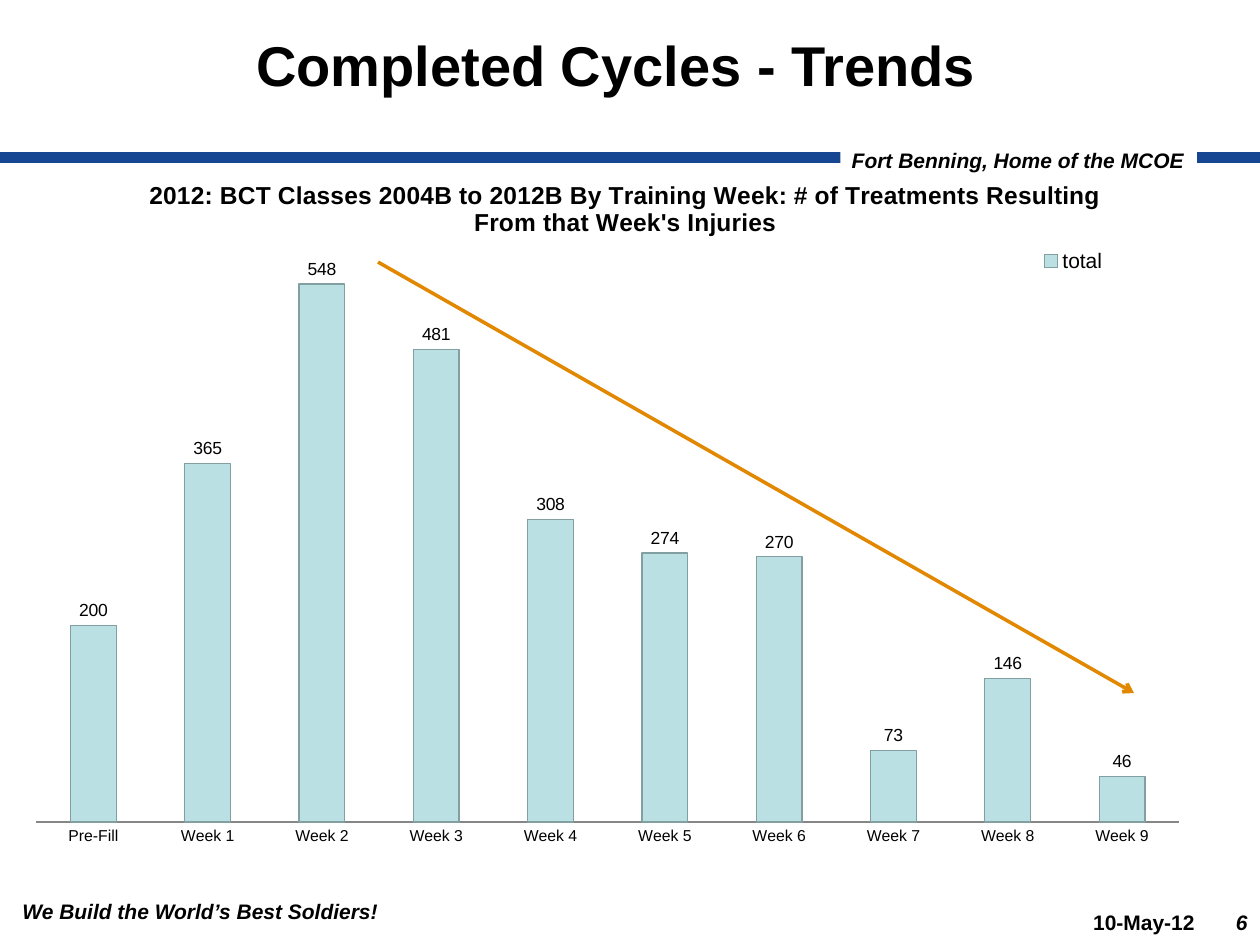
"""Build the slide on completed cycle trends: a column chart with a trend arrow."""
from dataclasses import dataclass

from lxml.etree import SubElement
from pptx import Presentation
from pptx.chart.data import CategoryChartData
from pptx.dml.color import RGBColor as Color
from pptx.enum.chart import (XL_CHART_TYPE as ChartType, XL_LABEL_POSITION as LabelSpot,
                             XL_LEGEND_POSITION as LegendSpot, XL_TICK_MARK as TickMark)
from pptx.enum.shapes import MSO_CONNECTOR as Connector, MSO_SHAPE as Shape
from pptx.enum.text import MSO_ANCHOR as Anchor, PP_ALIGN as Align
from pptx.oxml import parse_xml
from pptx.oxml.ns import nsdecls, qn
from pptx.util import Inches, Pt

TITLE = "Completed Cycles - Trends"
CHART_TITLE = ("2012: BCT Classes 2004B to 2012B By Training Week: "
               "# of Treatments Resulting From that Week's Injuries")
SERIES = "total"
CATEGORIES = ["Pre-Fill"] + [f"Week {week}" for week in range(1, 10)]
TREATMENTS = [200, 365, 548, 481, 308, 274, 270, 73, 146, 46]
SMALL_TEXTS = [
    ("We Build the World’s Best Soldiers!", (0.08, 7.08, 3.06, 0.3), Align.LEFT, True),
    ("10-May-12", (8.25, 7.17, 1.33, 0.3), Align.RIGHT, False),
    ("6", (9.58, 7.17, 0.42, 0.27), Align.RIGHT, True),
]
BANNER = "Fort Benning, Home of the MCOE"
TITLE_AT = (1.9, 0.19, 5.98, 0.64)
BANNER_AT = (6.67, 1.17, 2.83, 0.2)
CHART_AT = (0, 1.33, 9.58, 5.58)
RULE = (0, 1.25, 10, 1.25)
TREND = (3, 2.08, 9, 5.5)


@dataclass(frozen=True)
class Theme:
    """Colours, font and type sizes."""
    font: str = "Arial"
    ink: str = "000000"
    paper: str = "FFFFFF"
    rule: str = "164592"
    trend: str = "E28700"
    bar: str = "BBE0E3"
    bar_edge: str = "82A0A2"
    axis: str = "868686"
    title: int = 32
    heading: int = 14
    small: int = 12
    label: int = 10
    tick: int = 9


THEME = Theme()


def inches(values):
    return [Inches(value) for value in values]


def style(font, size, bold=False, italic=False):
    font.name, font.size, font.bold, font.italic = THEME.font, Pt(size), bold, italic
    font.color.rgb = Color.from_string(THEME.ink)


def write(shape, text, size, align, italic=False, wrap=False):
    frame = shape.text_frame
    frame.text, frame.word_wrap = text, wrap
    para = frame.paragraphs[0]
    para.alignment = align
    style(para.runs[0].font, size, True, italic)
    return frame


def add_line(page, ends, color, width, arrow=False):
    line = page.shapes.add_connector(Connector.STRAIGHT, *inches(ends))
    line.line.color.rgb = Color.from_string(color)
    line.line.width = Pt(width)
    if arrow:
        SubElement(line.line._get_or_add_ln(), qn("a:tailEnd"), type="arrow")
    SubElement(line._element.spPr, qn("a:effectLst"))


def place(element, index, target="", **shares):
    """Set a manual layout, in shares of the chart, on one chart part."""
    for old in element.findall(qn("c:layout")):
        element.remove(old)
    inner = f'<c:layoutTarget val="{target}"/>' if target else ""
    modes = "".join(f'<c:{key}Mode val="edge"/>' for key in "xy")
    sizes = "".join(f'<c:{key} val="{value}"/>' for key, value in shares.items())
    element.insert(index, parse_xml(
        f'<c:layout {nsdecls("c")}><c:manualLayout>{inner}{modes}{sizes}'
        "</c:manualLayout></c:layout>"))


def add_chart(page):
    data = CategoryChartData()
    data.categories = CATEGORIES
    data.add_series(SERIES, TREATMENTS)
    chart = page.shapes.add_chart(ChartType.COLUMN_CLUSTERED, *inches(CHART_AT), data).chart
    style(chart.font, THEME.label)

    heading = chart.chart_title
    heading.text_frame.text = CHART_TITLE
    style(heading.text_frame.paragraphs[0].runs[0].font, THEME.heading, True)
    heading.include_in_layout = True
    place(heading._element, 1, x=0.12, y=0.01)

    chart.has_legend = True
    legend = chart.legend
    legend.position, legend.include_in_layout = LegendSpot.RIGHT, True
    style(legend.font, THEME.small)
    place(legend._element, 1, x=0.86, y=0.11)

    values, weeks = chart.value_axis, chart.category_axis
    values.visible = values.has_major_gridlines = False
    values.minimum_scale, values.maximum_scale = 0, 600
    weeks.major_tick_mark = weeks.minor_tick_mark = TickMark.NONE
    weeks.format.line.color.rgb = Color.from_string(THEME.axis)
    style(weeks.tick_labels.font, THEME.tick)

    plot = chart.plots[0]
    plot.gap_width, plot.vary_by_categories = 150, False
    plot.has_data_labels = True
    labels = plot.data_labels
    labels.show_value, labels.position = True, LabelSpot.OUTSIDE_END
    style(labels.font, THEME.label)
    bars = plot.series[0].format
    bars.fill.solid()
    bars.fill.fore_color.rgb = Color.from_string(THEME.bar)
    bars.line.color.rgb = Color.from_string(THEME.bar_edge)
    bars.line.width = Pt(0.75)
    plot_area = chart._chartSpace.find(".//" + qn("c:plotArea"))
    place(plot_area, 0, "inner", x=0.03, y=0.093, w=0.947, h=0.838)


def add_banner(page):
    add_line(page, RULE, THEME.rule, 6)
    banner = page.shapes.add_shape(Shape.RECTANGLE, *inches(BANNER_AT))
    banner.shadow.inherit = False
    banner.fill.solid()
    banner.fill.fore_color.rgb = Color.from_string(THEME.paper)
    banner.line.fill.background()
    frame = write(banner, BANNER, THEME.small, Align.LEFT, italic=True)
    frame.margin_left = Inches(0.09)
    frame.margin_top = frame.margin_right = frame.margin_bottom = 0
    frame.vertical_anchor = Anchor.TOP


def main():
    deck = Presentation()
    deck.slide_width, deck.slide_height = inches((10, 7.5))
    page = deck.slides.add_slide(deck.slide_layouts.get_by_name("Title Only"))
    add_banner(page)
    title = page.shapes.title
    title.left, title.top, title.width, title.height = inches(TITLE_AT)
    write(title, TITLE, THEME.title, Align.CENTER).vertical_anchor = Anchor.MIDDLE
    for text, spot, align, italic in SMALL_TEXTS:
        box = page.shapes.add_textbox(*inches(spot))
        write(box, text, THEME.small, align, italic, wrap=align == Align.RIGHT)
    add_chart(page)
    add_line(page, TREND, THEME.trend, 2, arrow=True)
    deck.save("out.pptx")


if __name__ == "__main__":
    main()
